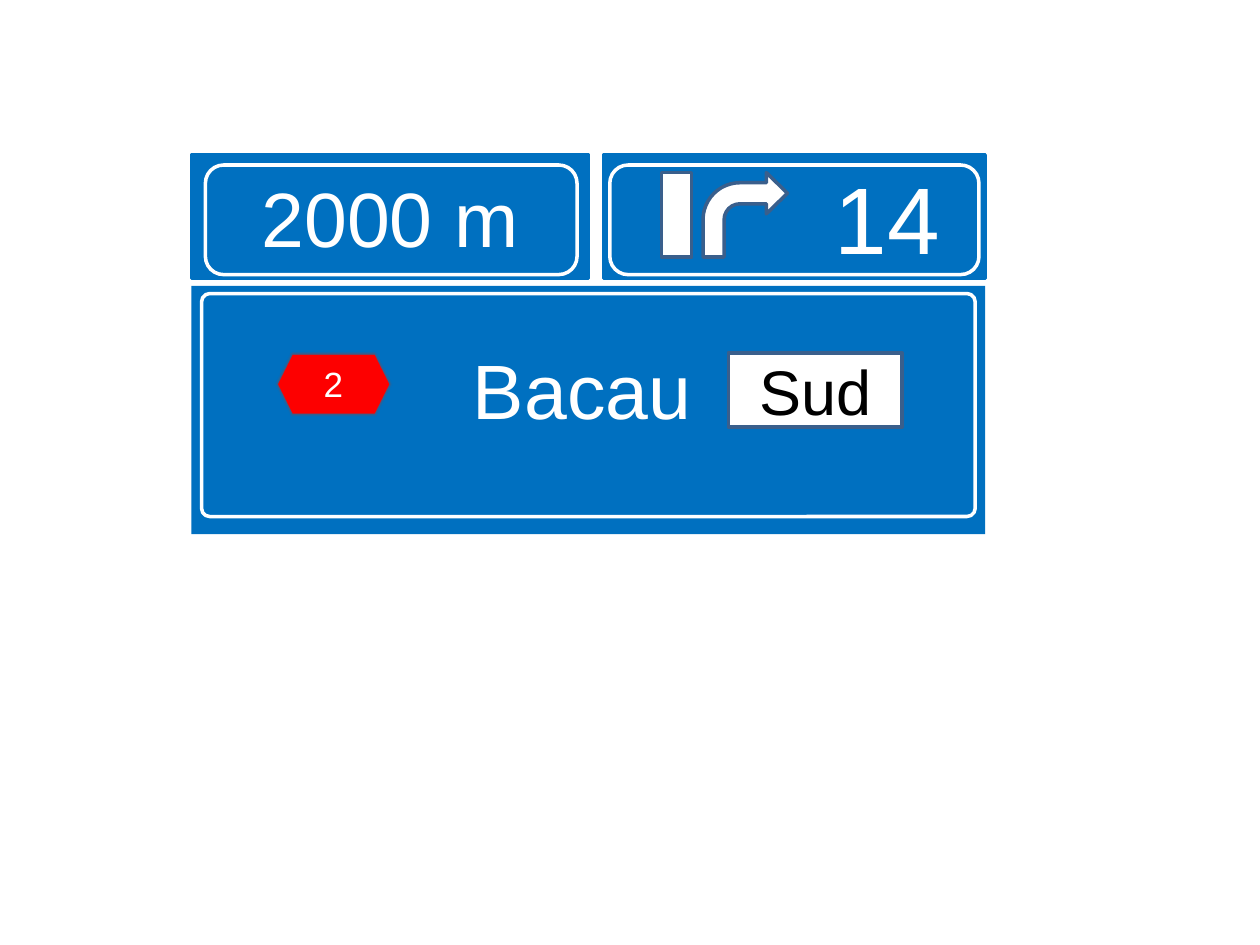
import pptx
import pptx.util
import pptx.dml.color
import pptx.enum.shapes
import pptx.enum.text
import lxml.etree

Inches, Pt = pptx.util.Inches, pptx.util.Pt
RGB = pptx.dml.color.RGBColor.from_string
MSO = pptx.enum.shapes.MSO_SHAPE
ANCHOR = pptx.enum.text.MSO_ANCHOR
THEME = {
    "font": "Arial", "blue": "0070C0", "white": "FFFFFF", "edge": "3A5F8C",
    "red": "FF0000", "black": "000000", "line": 2,
    "route": 20, "suffix": 36, "main": 44, "exit": 54,
}

prs = pptx.Presentation()
prs.slide_width, prs.slide_height = Inches(10), Inches(7.5)
s = prs.slides.add_slide(prs.slide_layouts[6])


def add_shape(kind, box, fill=None, line=None, adj=()):
    sp = s.shapes.add_shape(kind, *map(Inches, box))
    sp.shadow.inherit = False
    for i, value in enumerate(adj):
        sp.adjustments[i] = value
    for fmt, color in ((sp.fill, fill), (sp.line.fill, line)):
        if color:
            fmt.solid()
            fmt.fore_color.rgb = RGB(THEME[color])
        else:
            fmt.background()
    if line:
        sp.line.width = Pt(THEME["line"])
    return sp


def add_text(sp, text, size, color="white", **frame):
    tf = sp.text_frame
    settings = {"word_wrap": True, "vertical_anchor": ANCHOR.MIDDLE, **frame}
    for name, value in settings.items():
        setattr(tf, name, value)
    p = tf.paragraphs[0]
    p.alignment = pptx.enum.text.PP_ALIGN.CENTER
    r = p.add_run()
    r.text = text
    for name, value in {"name": THEME["font"], "size": Pt(THEME[size])}.items():
        setattr(r.font, name, value)
    r.font.color.rgb = RGB(THEME[color])


panel = add_shape(MSO.RECTANGLE, (1.52, 2.27, 6.3, 1.97), "blue")
add_text(panel, "Bacau", "main", vertical_anchor=ANCHOR.TOP,
         margin_left=0, margin_top=Inches(0.45), margin_bottom=Inches(0.24))
add_shape(MSO.ROUNDED_RECTANGLE, (1.6, 2.33, 6.14, 1.77), line="white", adj=[0.037])

plates = [
    (4.79, 3.03, 4.84, 2.93, "14", "exit", {"margin_left": Inches(1.57)}),
    (1.52, 3.15, 1.63, 2.95, "2000 m", "main", {}),
]
for left, width, rim_left, rim_width, text, size, frame in plates:
    plate = add_shape(MSO.ROUNDED_RECTANGLE, (left, 1.23, width, 0.98), "blue", "blue", [0])
    add_text(plate, text, size, **frame)
    add_shape(MSO.ROUNDED_RECTANGLE, (rim_left, 1.31, rim_width, 0.87), line="white")

add_shape(MSO.RECTANGLE, (5.25, 1.37, 0.24, 0.67), "white", "edge")
add_shape(MSO.BENT_ARROW, (5.58, 1.37, 0.67, 0.67), "white", "edge",
          [0.25, 0.245, 0.25, 0.438])

route = add_shape(MSO.HEXAGON, (2.19, 2.8, 0.91, 0.49), "red", "edge")
add_text(route, "2", "route")
effects = route.element.spPr.find(pptx.oxml.ns.qn("a:effectLst"))
soft = lxml.etree.SubElement(effects, pptx.oxml.ns.qn("a:softEdge"))
soft.set("rad", str(Pt(1)))

suffix = add_shape(MSO.RECTANGLE, (5.78, 2.8, 1.38, 0.59), "white", "edge")
add_text(suffix, "Sud", "suffix", "black")

prs.save("out.pptx")
